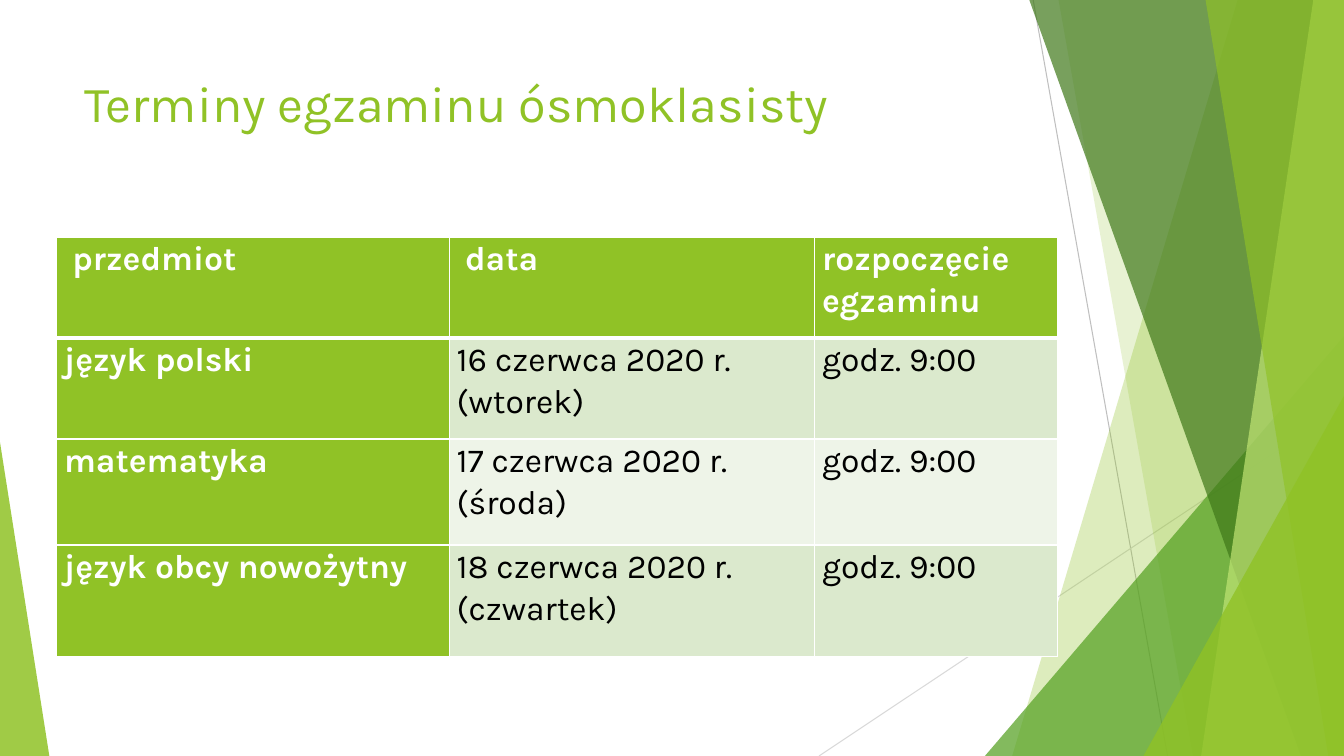
import pptx
import pptx.dml.color
import pptx.enum.shapes
import pptx.enum.text
import pptx.oxml
import pptx.oxml.ns
import pptx.util

SHAPE = pptx.enum.shapes.MSO_SHAPE
WIDE, HIGH = 1280, 720
GREEN, WHITE, BLACK = "90C226", "FFFFFF", "000000"
BANDS = ["DBE9CD", "EEF4E8"]


def px(num):
    return pptx.util.Emu(num * 9525)


def tint(code):
    return pptx.dml.color.RGBColor.from_string(code)


def node(tag, **atts):
    item = pptx.oxml.parse_xml(f"<a:{tag} {pptx.oxml.ns.nsdecls('a')}/>")
    for name, val in atts.items():
        item.set(name, str(val))
    return item


def write(frame, text, size=24, color=BLACK, bold=False, space=1.0):
    frame.word_wrap = True
    para = frame.paragraphs[0]
    para.line_spacing = space
    run = para.add_run()
    run.text = text
    run.font.name = "Karla"
    run.font.size = pptx.util.Pt(size)
    run.font.bold = bold
    run.font.color.rgb = tint(color)


class Page:
    def __init__(self, deck):
        self.shapes = deck.slides.add_slide(deck.slide_layouts[6]).shapes

    def line(self, start, end, color):
        kind = pptx.enum.shapes.MSO_CONNECTOR.STRAIGHT
        line = self.shapes.add_connector(kind, *map(px, start + end))
        line.line.color.rgb = tint(color)
        line.line.width = pptx.util.Pt(0.75)
        line._element.spPr.append(node("effectLst"))

    def paint(self, shape, color, alpha):
        shape.shadow.inherit = False
        shape.line.fill.background()
        shape.fill.solid()
        shape.fill.fore_color.rgb = tint(color)
        fill = shape._element.spPr.find(pptx.oxml.ns.qn("a:solidFill"))
        fill[0].append(node("alpha", val=alpha * 1000))

    def shard(self, top, base, color, alpha):
        """Fill from a slanted left edge to the right side of the slide."""
        form = self.shapes.build_freeform(top, -1, scale=9525)
        form.add_line_segments([(WIDE, -1), (WIDE, HIGH), (base, HIGH)])
        self.paint(form.convert_to_shape(), color, alpha)

    def wedge(self, left, top, width, apex, color, alpha):
        """Triangle that stands on the bottom edge of the slide."""
        box = map(px, (left, top, width, HIGH - top))
        shape = self.shapes.add_shape(SHAPE.ISOSCELES_TRIANGLE, *box)
        shape.adjustments[0] = apex
        self.paint(shape, color, alpha)

    def title(self, box, text):
        frame = self.shapes.add_textbox(*map(px, box)).text_frame
        write(frame, text, size=36, color=GREEN)

    def edge(self, cell, thick):
        """White cell borders; thick names the side drawn at 3 pt."""
        props = cell._tc.get_or_add_tcPr()
        for spot, side in enumerate("LRTB"):
            width = pptx.util.Pt(3 if side == thick else 1)
            line = node(f"ln{side}", w=width)
            fill = node("solidFill")
            fill.append(node("srgbClr", val=WHITE))
            line.append(fill)
            props.insert(spot, line)

    def table(self, left, top, cols, rows, data):
        box = map(px, (left, top, sum(cols), sum(rows)))
        grid = self.shapes.add_table(len(rows), len(cols), *box).table
        grid.horz_banding = False
        for col, width in zip(grid.columns, cols):
            col.width = px(width)
        for row, height in zip(grid.rows, rows):
            row.height = px(height)
        for r, texts in enumerate(data):
            for c, text in enumerate(texts):
                cell = grid.cell(r, c)
                head = r == 0 or c == 0
                cell.fill.solid()
                cell.fill.fore_color.rgb = tint(GREEN if head else BANDS[(r - 1) % 2])
                # The first two headings are set in a little
                cell.margin_left = px(15 if r == 0 and c < 2 else 7)
                cell.margin_right = px(7)
                cell.margin_top = cell.margin_bottom = 0
                write(cell.text_frame, text, color=WHITE if head else BLACK,
                      bold=head, space=1.07)
                self.edge(cell, {0: "B", 1: "T"}.get(r))


def main():
    deck = pptx.Presentation()
    deck.slide_width, deck.slide_height = px(WIDE), px(HIGH)
    page = Page(deck)

    # Backdrop, from back to front
    page.line((984, 0), (1112, HIGH), "BFBFBF")
    page.line((WIDE, 387), (780, HIGH), "D9D9D9")
    page.shard(1179, 964, GREEN, 30)
    page.shard(1008, 1136, GREEN, 20)
    page.wedge(938, 320, 342, 1, "54A021", 72)
    page.shard(980, 1239, "3F7819", 70)
    page.shard(1251, 1144, "C0E474", 70)
    page.shard(1148, 1265, GREEN, 65)
    page.wedge(1089, 377, 191, 1, GREEN, 80)
    page.wedge(0, 421, 47, 0, GREEN, 85)

    # Heading
    page.title((71, 64, 902, 138), "Terminy egzaminu ósmoklasisty")

    # Exam dates
    hour = "godz. 9:00"
    page.table(54, 226, [374, 348, 231], [96, 96, 101, 106], [
        ["przedmiot", "data", "rozpoczęcie egzaminu"],
        ["język polski", "16 czerwca 2020 r. (wtorek)", hour],
        ["matematyka", "17 czerwca 2020 r. (środa)", hour],
        ["język obcy nowożytny", "18 czerwca 2020 r. (czwartek)", hour],
    ])
    deck.save("out.pptx")


if __name__ == "__main__":
    main()
